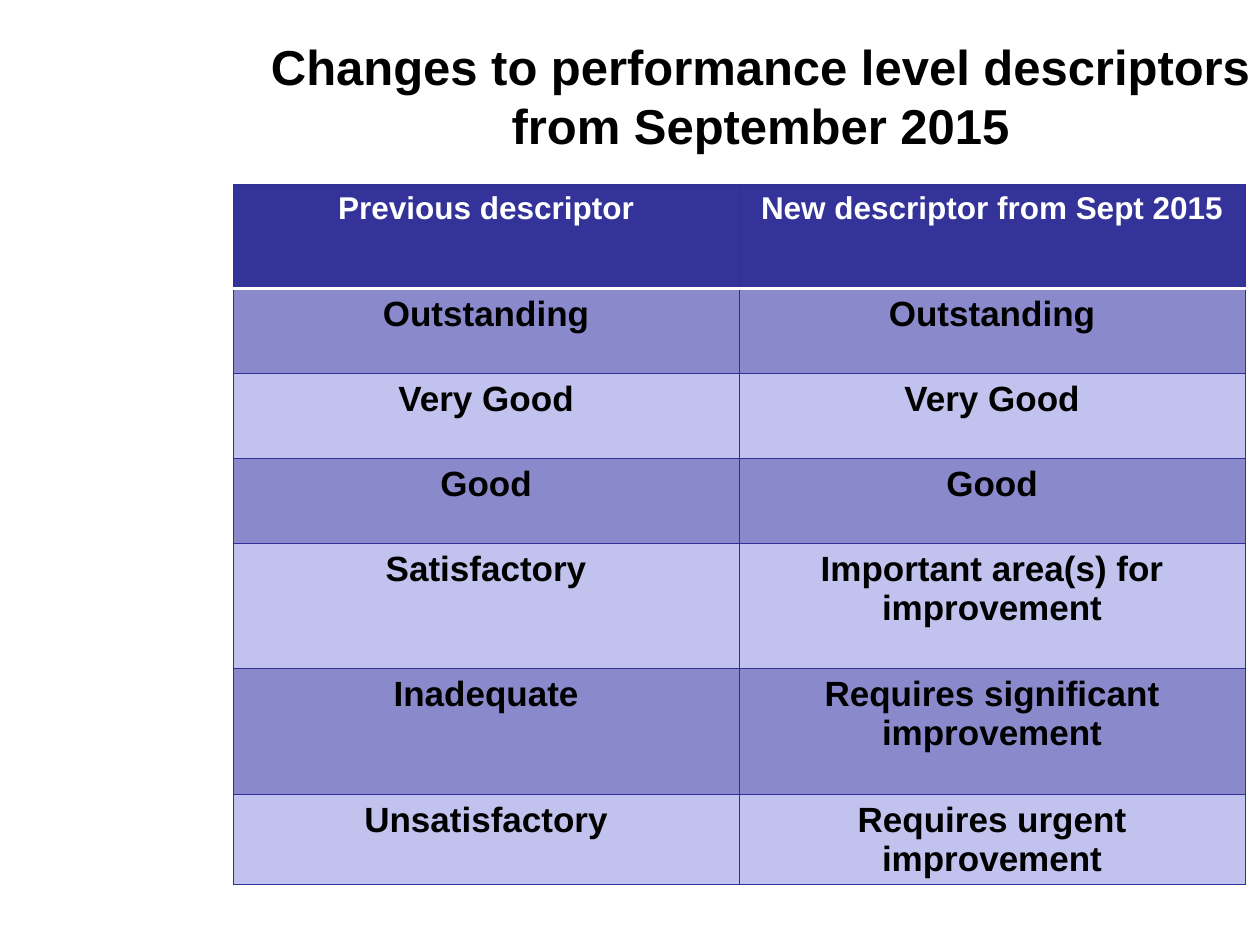
from lxml import etree
from pptx import Presentation
from pptx import util as u
from pptx.dml.color import RGBColor
from pptx.enum import text
from pptx.oxml import ns

WHITE = RGBColor(0xFF, 0xFF, 0xFF)
BLACK = RGBColor(0, 0, 0)
INDIGO = RGBColor(0x33, 0x33, 0x99)
EDGE = RGBColor(0x2F, 0x2F, 0x98)
VIOLET = RGBColor(0x89, 0x89, 0xCC)
LILAC = RGBColor(0xC2, 0xC2, 0xEE)

DESCRIPTORS = [
    ("Previous descriptor", "New descriptor from Sept 2015"),
    ("Outstanding", "Outstanding"),
    ("Very Good", "Very Good"),
    ("Good", "Good"),
    ("Satisfactory", "Important area(s) for improvement"),
    ("Inadequate", "Requires significant improvement"),
    ("Unsatisfactory", "Requires urgent improvement"),
]
ROW_HEIGHTS = [2.1, 1.71, 1.71, 1.71, 2.53, 2.53, 1.81]


def write(frame, words, size=20, color=BLACK, font="Arial", bold=True):
    para = frame.paragraphs[0]
    para.alignment = text.PP_ALIGN.CENTER
    span = para.add_run()
    span.text = words
    span.font.name = font
    span.font.size = u.Pt(size)
    span.font.bold = bold
    span.font.color.rgb = color


def add_border(cell, side, color, width):
    props = cell._tc.get_or_add_tcPr()
    line = etree.Element(ns.qn(f"a:ln{side}"), w=str(u.Pt(width)))
    fill = etree.SubElement(line, ns.qn("a:solidFill"))
    etree.SubElement(fill, ns.qn("a:srgbClr"), val=str(color))
    props.insert(len(props) - 1, line)


class SlideBuilder:
    def __init__(self, deck):
        self.page = deck.slides.add_slide(deck.slide_layouts[6])

    def title(self, words, left, top, width, height):
        box = self.page.shapes.add_textbox(
            u.Cm(left), u.Cm(top), u.Cm(width), u.Cm(height))
        box.text_frame.word_wrap = True
        box.text_frame.vertical_anchor = text.MSO_ANCHOR.MIDDLE
        write(box.text_frame, words, size=28)

    def table(self, rows, heights, left, top, width):
        frame = self.page.shapes.add_table(
            len(rows), len(rows[0]), u.Cm(left), u.Cm(top),
            u.Cm(width), u.Cm(sum(heights)))
        for index, (row, height) in enumerate(zip(rows, heights)):
            frame.table.rows[index].height = u.Cm(height)
            for column, words in enumerate(row):
                self.cell(frame.table.cell(index, column), words, index)

    def cell(self, cell, words, index):
        header = index == 0
        cell.fill.solid()
        cell.fill.fore_color.rgb = INDIGO if header else (LILAC, VIOLET)[index % 2]
        borders = {side: (EDGE, 0.75) for side in "LRTB"}
        if header:
            borders["B"] = (WHITE, 2)
        elif index == 1:
            borders["T"] = (WHITE, 2)
        for side, (color, width) in borders.items():
            add_border(cell, side, color, width)
        write(cell.text_frame, words, size=18 if header else 20,
              color=WHITE if header else BLACK)


def main():
    deck = Presentation()
    deck.slide_width, deck.slide_height = u.Cm(25.4), u.Cm(19.05)
    builder = SlideBuilder(deck)
    builder.table(DESCRIPTORS, ROW_HEIGHTS, 4.7, 3.72, 20.4)
    builder.title("Changes to performance level descriptors from September 2015",
                  5.13, 0.74, 20.4, 2.36)
    deck.save("out.pptx")


if __name__ == "__main__":
    main()
